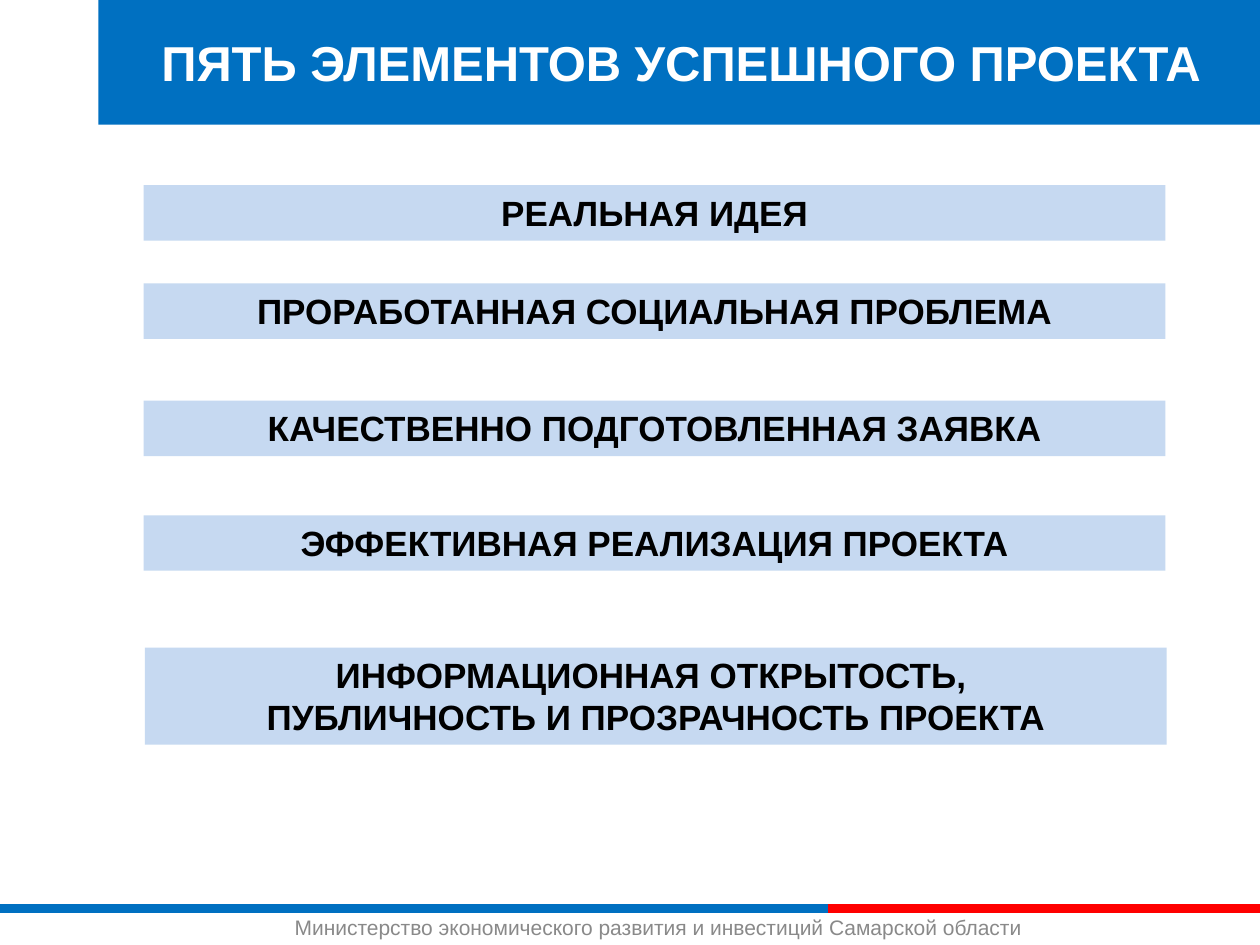
from dataclasses import dataclass

from lxml.etree import SubElement
from pptx import Presentation
from pptx.dml.color import RGBColor
from pptx.enum.shapes import MSO_CONNECTOR, MSO_SHAPE
from pptx.enum.text import MSO_ANCHOR, PP_ALIGN
from pptx.oxml.ns import qn
from pptx.util import Inches, Pt

COLUMNS, ROWS = 100, 75
SLIDE_WIDTH, SLIDE_HEIGHT = Inches(10), Inches(7.5)
COLORS = {
    "blue": "0070C1",
    "red": "FF0000",
    "pale": "C6D9F1",
    "white": "FFFFFF",
    "black": "000000",
    "gray": "898989",
}
FOOTER_ROW = 72.1
RULE_SPLIT = 65.7


@dataclass(frozen=True)
class Area:
    column: float
    row: float
    columns: float
    rows: float

    def box(self) -> tuple[int, int, int, int]:
        return across(self.column), down(self.row), across(self.columns), down(self.rows)


@dataclass(frozen=True)
class Element:
    text: str
    row: float
    rows: float = 4.4
    column: float = 11.4


@dataclass(frozen=True)
class Rule:
    start: float
    end: float
    color: str


ELEMENTS = (
    Element("РЕАЛЬНАЯ ИДЕЯ", 14.7),
    Element("ПРОРАБОТАННАЯ СОЦИАЛЬНАЯ ПРОБЛЕМА", 22.5),
    Element("КАЧЕСТВЕННО ПОДГОТОВЛЕННАЯ ЗАЯВКА", 31.8),
    Element("ЭФФЕКТИВНАЯ РЕАЛИЗАЦИЯ ПРОЕКТА", 40.9),
    Element("ИНФОРМАЦИОННАЯ ОТКРЫТОСТЬ, \nПУБЛИЧНОСТЬ И ПРОЗРАЧНОСТЬ ПРОЕКТА", 51.4, 7.7, 11.5),
)
RULES = (Rule(0, RULE_SPLIT, "blue"), Rule(RULE_SPLIT, COLUMNS, "red"))


def across(columns: float) -> int:
    return round(SLIDE_WIDTH * columns / COLUMNS)


def down(rows: float) -> int:
    return round(SLIDE_HEIGHT * rows / ROWS)


def color(name: str) -> RGBColor:
    return RGBColor.from_string(COLORS[name])


def write(frame, text: str, *, size: float, ink: str, bold: bool = False,
          align=PP_ALIGN.LEFT, anchor=MSO_ANCHOR.TOP) -> None:
    frame.word_wrap = True
    frame.vertical_anchor = anchor
    frame.text = text
    for paragraph in frame.paragraphs:
        paragraph.alignment = align
        for run in paragraph.runs:
            run.font.name = "Arial"
            run.font.size = Pt(size)
            run.font.bold = bold
            run.font.color.rgb = color(ink)


def draw_panel(slide, area: Area, fill: str, text: str, **text_format) -> None:
    panel = slide.shapes.add_shape(MSO_SHAPE.RECTANGLE, *area.box())
    panel.shadow.inherit = False
    panel.fill.solid()
    panel.fill.fore_color.rgb = color(fill)
    panel.line.fill.background()
    write(panel.text_frame, text, bold=True, align=PP_ALIGN.CENTER, **text_format)


def draw_rule(slide, rule: Rule) -> None:
    stroke = slide.shapes.add_connector(
        MSO_CONNECTOR.STRAIGHT,
        across(rule.start), down(FOOTER_ROW), across(rule.end), down(FOOTER_ROW),
    )
    stroke.line.color.rgb = color(rule.color)
    stroke.line.width = Pt(5)
    SubElement(stroke._element.spPr, qn("a:effectLst"))


def main() -> None:
    deck = Presentation()
    deck.slide_width, deck.slide_height = SLIDE_WIDTH, SLIDE_HEIGHT
    slide = deck.slides.add_slide(deck.slide_layouts[6])

    for rule in RULES:
        draw_rule(slide, rule)
    ministry = slide.shapes.add_textbox(*Area(22.4, FOOTER_ROW, 65.4, 3).box())
    write(ministry.text_frame,
          "Министерство экономического развития и инвестиций Самарской области",
          size=12, ink="gray")

    draw_panel(slide, Area(7.8, 0, 92.5, 9.9), "blue", "ПЯТЬ ЭЛЕМЕНТОВ УСПЕШНОГО ПРОЕКТА",
               size=28, ink="white", anchor=MSO_ANCHOR.MIDDLE)
    for element in ELEMENTS:
        draw_panel(slide, Area(element.column, element.row, 81.1, element.rows), "pale",
                   element.text, size=20, ink="black")

    deck.save("out.pptx")


if __name__ == "__main__":
    main()
